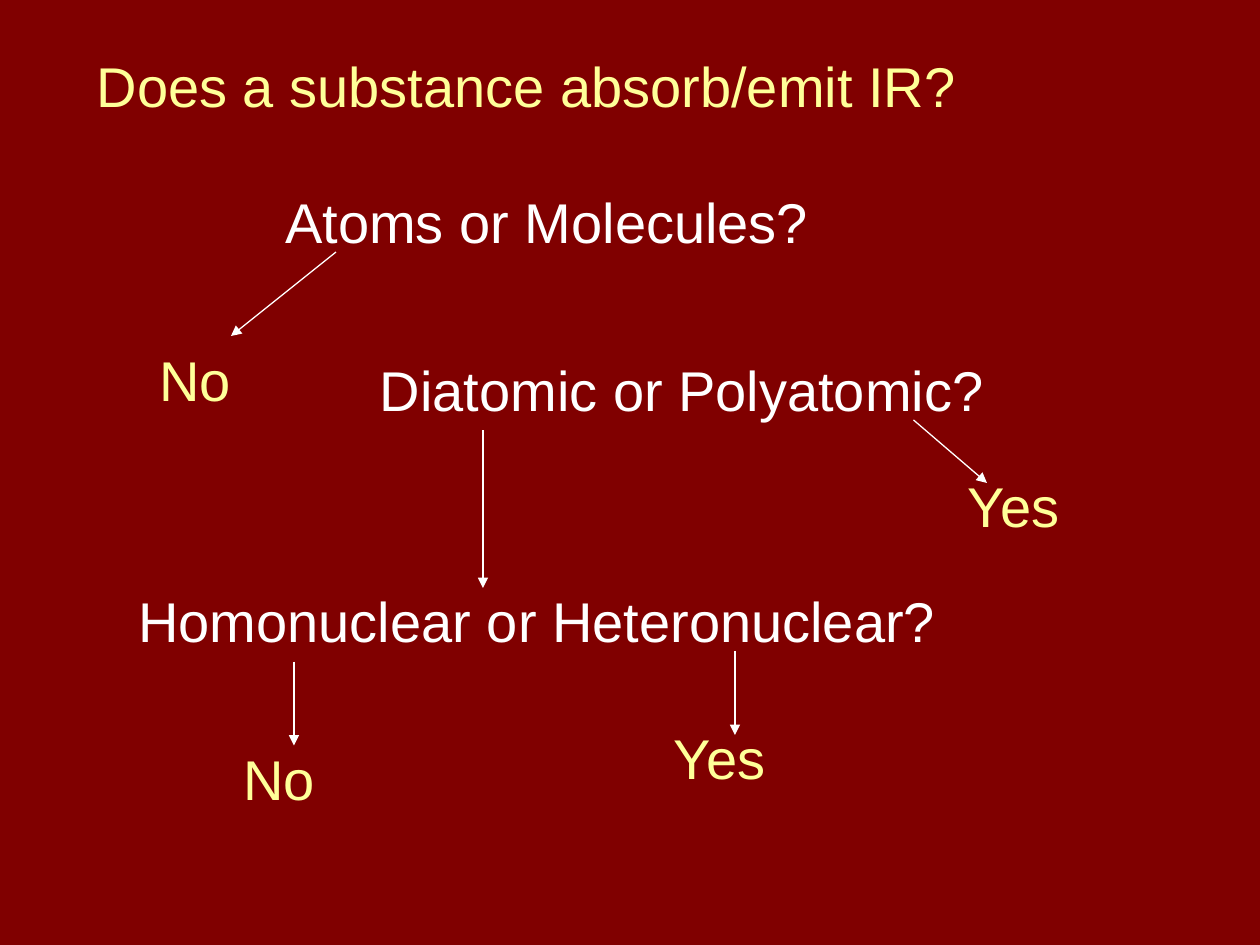
from lxml.etree import SubElement
from pptx import Presentation
from pptx.dml.color import RGBColor
from pptx.enum.shapes import MSO_CONNECTOR
from pptx.enum.text import MSO_ANCHOR, MSO_AUTO_SIZE, PP_ALIGN
from pptx.oxml.ns import qn
from pptx.util import Inches, Pt

MAROON = RGBColor(0x80, 0x00, 0x00)
YELLOW = RGBColor(0xFF, 0xFF, 0x99)
WHITE = RGBColor(0xFF, 0xFF, 0xFF)

COLUMNS, ROWS = 120, 90
CELL = Inches(1) / 12
HANGING = Inches(0.38)

TITLE = ("Does a substance absorb/emit IR?", 8, 5, 85, 7)
QUESTIONS = [
    ("Atoms or Molecules?", 26, 18, 56, 7),
    ("Diatomic or Polyatomic?", 35, 34, 66, 9),
    ("Homonuclear or Heteronuclear?", 12, 56, 84, 8),
]
ANSWERS = [
    ("No", 14, 33),
    ("Yes", 91, 45),
    ("No", 22, 71),
    ("Yes", 63, 69),
]
ANSWER_SIZE = (12, 7)
BRANCHES = [
    (32, 24, 22, 32),
    (46, 41, 46, 56),
    (87, 40, 94, 46),
    (28, 63, 28, 71),
    (70, 62, 70, 70),
]


def grid(*cells):
    return [round(cell * CELL) for cell in cells]


def write_text(holder, wording, color):
    frame = holder.text_frame
    frame.word_wrap = True
    frame.auto_size = MSO_AUTO_SIZE.NONE
    frame.vertical_anchor = MSO_ANCHOR.TOP
    paragraph = frame.paragraphs[0]
    paragraph.alignment = PP_ALIGN.LEFT
    paragraph.line_spacing = 0.9
    paragraph.space_before = Pt(6.4)
    properties = paragraph._p.get_or_add_pPr()
    properties.set("marL", str(HANGING))
    properties.set("indent", str(-HANGING))
    run = paragraph.add_run()
    run.text = wording
    run.font.name = "Arial"
    run.font.size = Pt(32)
    run.font.color.rgb = color


def place_title(slide, wording, *cells):
    title = slide.shapes.title
    title.left, title.top, title.width, title.height = grid(*cells)
    write_text(title, wording, YELLOW)


def add_label(slide, color, wording, *cells):
    label = slide.shapes.add_textbox(*grid(*cells))
    write_text(label, wording, color)


def add_arrow(slide, *cells):
    arrow = slide.shapes.add_connector(MSO_CONNECTOR.STRAIGHT, *grid(*cells))
    arrow.line.color.rgb = WHITE
    arrow.line.width = Pt(0.75)
    SubElement(arrow.line._get_or_add_ln(), qn("a:tailEnd"), type="triangle")
    SubElement(arrow._element.spPr, qn("a:effectLst"))


def main():
    deck = Presentation()
    deck.slide_width, deck.slide_height = grid(COLUMNS, ROWS)
    slide = deck.slides.add_slide(deck.slide_layouts[5])
    slide.background.fill.solid()
    slide.background.fill.fore_color.rgb = MAROON

    place_title(slide, *TITLE)
    for question in QUESTIONS:
        add_label(slide, WHITE, *question)
    for answer in ANSWERS:
        add_label(slide, YELLOW, *answer, *ANSWER_SIZE)
    for branch in BRANCHES:
        add_arrow(slide, *branch)

    deck.save("out.pptx")


if __name__ == "__main__":
    main()
